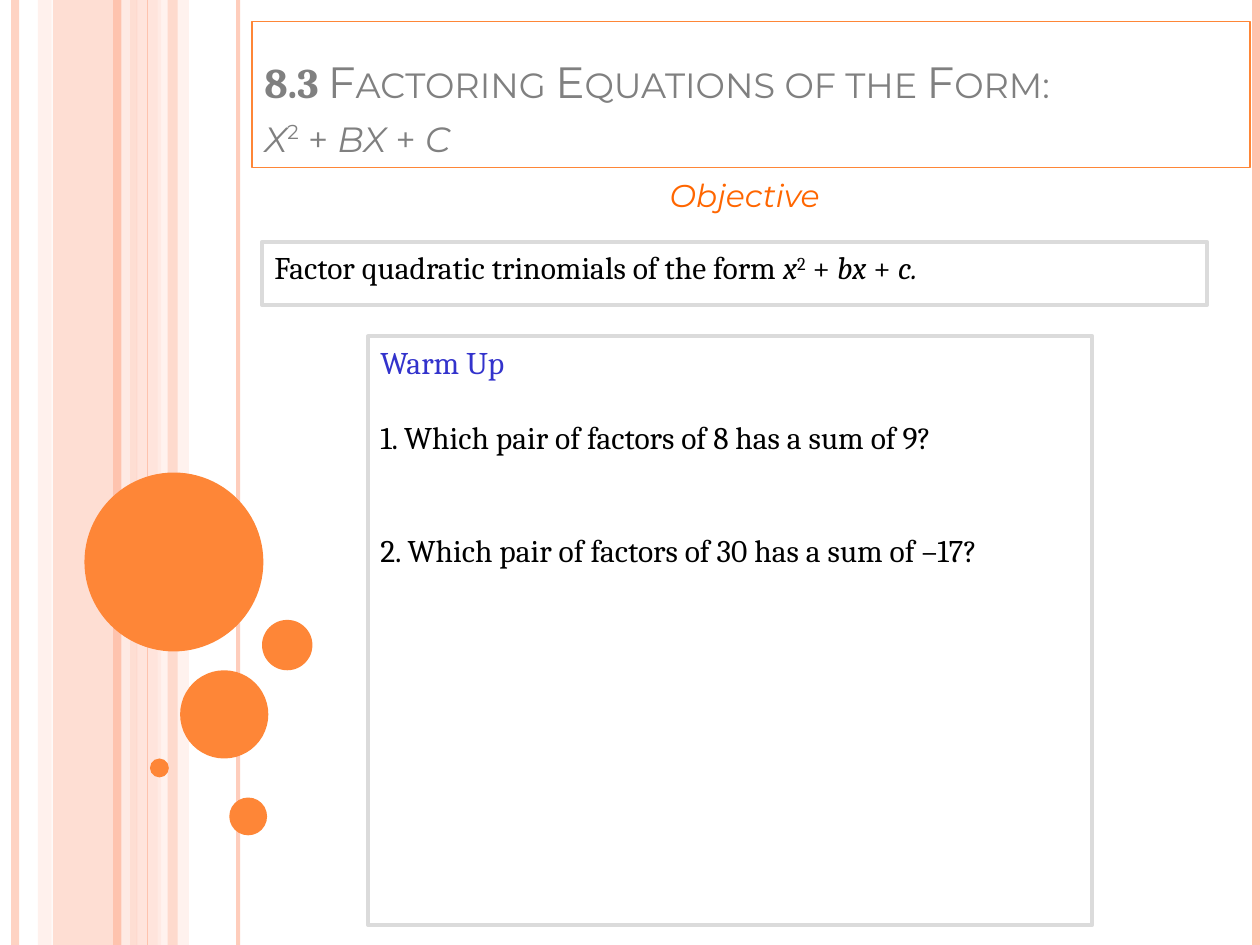
from pptx import Presentation
from pptx.dml.color import RGBColor
from pptx.enum.shapes import MSO_CONNECTOR, MSO_SHAPE
from pptx.enum.text import MSO_ANCHOR, PP_ALIGN
from pptx.oxml.ns import qn
from pptx.util import Inches, Pt
from lxml import etree

RECTANGLE, OVAL = MSO_SHAPE.RECTANGLE, MSO_SHAPE.OVAL
STRAIGHT = MSO_CONNECTOR.STRAIGHT
TOP, MIDDLE, BOTTOM = MSO_ANCHOR.TOP, MSO_ANCHOR.MIDDLE, MSO_ANCHOR.BOTTOM
CENTER = PP_ALIGN.CENTER

COLORS = {
    "peach": "FEC3AE", "light": "FFD9CE", "pale": "FFEDE8",
    "orange": "FE8637", "gray": "808080", "frame": "DBDBDB",
    "blue": "3333CC", "black": "000000", "accent": "FF6600",
}
SERIF, SANS = "Cambria", "Montserrat"
SLIDE_WIDTH, SLIDE_HEIGHT = 10, 7.5

# left, width, color, opacity in percent
BANDS = [
    (0.42, 0.67, "peach", 54), (0.3, 0.11, "light", 36),
    (1.08, 0.2, "light", 70), (1.25, 0.25, "pale", 71),
]
FRONT_BAND = (1.33, 0.08, "peach", 51)
# x, color, line width in points, opacity in percent
STRIPES = [
    (0.12, "peach", 4.5, 73), (1, "pale", 4.5, 83), (0.93, "peach", 4.5, 100),
    (1.89, "peach", 2.25, 82), (1.17, "peach", 0.75, 100), (9.97, "peach", 4.5, 100),
]
# left, top, diameter
CIRCLES = [
    (0.67, 3.75, 1.42), (1.43, 5.32, 0.7), (1.19, 6.02, 0.15),
    (1.82, 6.33, 0.3), (2.08, 4.92, 0.4),
]


def color(name):
    return RGBColor.from_string(COLORS[name])


def set_opacity(shape, percent):
    if percent < 100:
        node = next(shape._element.spPr.iter(qn("a:srgbClr")))
        etree.SubElement(node, qn("a:alpha")).set("val", str(percent * 1000))


def add_filled(slide, preset, box, fill, opacity=100):
    shape = slide.shapes.add_shape(preset, *map(Inches, box))
    shape.shadow.inherit = False
    shape.fill.solid()
    shape.fill.fore_color.rgb = color(fill)
    shape.line.fill.background()
    set_opacity(shape, opacity)


def add_band(slide, left, width, fill, opacity):
    add_filled(slide, RECTANGLE, (left, 0, width, SLIDE_HEIGHT), fill, opacity)


def add_stripe(slide, x, stroke, width, opacity):
    stripe = slide.shapes.add_connector(
        STRAIGHT, Inches(x), Inches(0), Inches(x), Inches(SLIDE_HEIGHT))
    stripe.line.color.rgb = color(stroke)
    stripe.line.width = Pt(width)
    set_opacity(stripe, opacity)
    etree.SubElement(stripe._element.spPr, qn("a:effectLst"))


def add_text_frame(slide, box, anchor=TOP, border=None, border_width=2.25):
    shape = slide.shapes.add_textbox(*map(Inches, box))
    if border:
        shape.line.color.rgb = color(border)
        shape.line.width = Pt(border_width)
    frame = shape.text_frame
    frame.word_wrap = True
    frame.vertical_anchor = anchor
    return frame


def style(font, name, size, font_color):
    font.name, font.size = name, Pt(size)
    font.color.rgb = color(font_color)


def add_run(paragraph, text, italic=False, superscript=False):
    run = paragraph.add_run()
    run.text = text
    if italic:
        run.font.italic = True
    if superscript:
        run._r.get_or_add_rPr().set("baseline", "30000")
    return run


def add_trinomial(paragraph, ending):
    """Write x² + bx + c with italic variables."""
    runs = [add_run(paragraph, "x", italic=True),
            add_run(paragraph, "2", superscript=True)]
    for text, italic in ((" + ", False), ("bx", True), (" + ", False), (ending, True)):
        runs.append(add_run(paragraph, text, italic))
    return runs


def draw_backdrop(slide):
    for band in BANDS:
        add_band(slide, *band)
    for stripe in STRIPES:
        add_stripe(slide, *stripe)
    add_band(slide, *FRONT_BAND)
    for left, top, diameter in CIRCLES:
        add_filled(slide, OVAL, (left, top, diameter, diameter), "orange")


def draw_title(slide, box):
    frame = add_text_frame(slide, box, BOTTOM, "orange", 0.75)
    paragraph = frame.paragraphs[0]
    number = add_run(paragraph, "8.3 ")
    heading = add_run(paragraph, "Factoring Equations of the Form:")
    paragraph.add_line_break()
    runs = [heading, *add_trinomial(paragraph, "c")]
    style(number.font, SERIF, 30, "gray")
    number.font.bold = True
    for run in runs:
        style(run.font, SANS, 25, "gray")
    for run in [number, *runs]:
        run._r.get_or_add_rPr().set("cap", "small")


def draw_warm_up(slide, box):
    frame = add_text_frame(slide, box, border="frame")
    # text, color, space before in points
    lines = [
        ("Warm Up", "blue", 0),
        ("1. Which pair of factors of 8 has a sum of 9?", "black", 21.5),
        ("2. Which pair of factors of 30 has a sum of –17?", "black", 43),
    ]
    for index, (text, text_color, space) in enumerate(lines):
        paragraph = frame.add_paragraph() if index else frame.paragraphs[0]
        paragraph.text = text
        paragraph.space_before = Pt(space)
        style(paragraph.font, SERIF, 18, text_color)
        properties = paragraph._p.get_or_add_pPr()
        properties.set("marL", str(Inches(0.57)))
        properties.set("indent", str(-Inches(0.57)))


def draw_objective(slide, box):
    paragraph = add_text_frame(slide, box, border="frame").paragraphs[0]
    add_run(paragraph, "Factor quadratic trinomials of the form ")
    add_trinomial(paragraph, "c.")
    style(paragraph.font, SERIF, 18, "black")


def draw_objective_heading(slide, box):
    paragraph = add_text_frame(slide, box, MIDDLE).paragraphs[0]
    paragraph.text = "Objective"
    paragraph.alignment = CENTER
    style(paragraph.font, SANS, 18, "accent")
    paragraph.font.italic = True


def main():
    presentation = Presentation()
    presentation.slide_width = Inches(SLIDE_WIDTH)
    presentation.slide_height = Inches(SLIDE_HEIGHT)
    slide = presentation.slides.add_slide(presentation.slide_layouts[6])
    draw_backdrop(slide)
    draw_title(slide, (2, 0.17, 7.92, 1.16))
    draw_warm_up(slide, (2.92, 2.67, 5.75, 4.67))
    draw_objective(slide, (2.08, 1.92, 7.5, 0.5))
    draw_objective_heading(slide, (1.82, 1.17, 8.18, 0.75))
    presentation.save("out.pptx")


if __name__ == "__main__":
    main()
